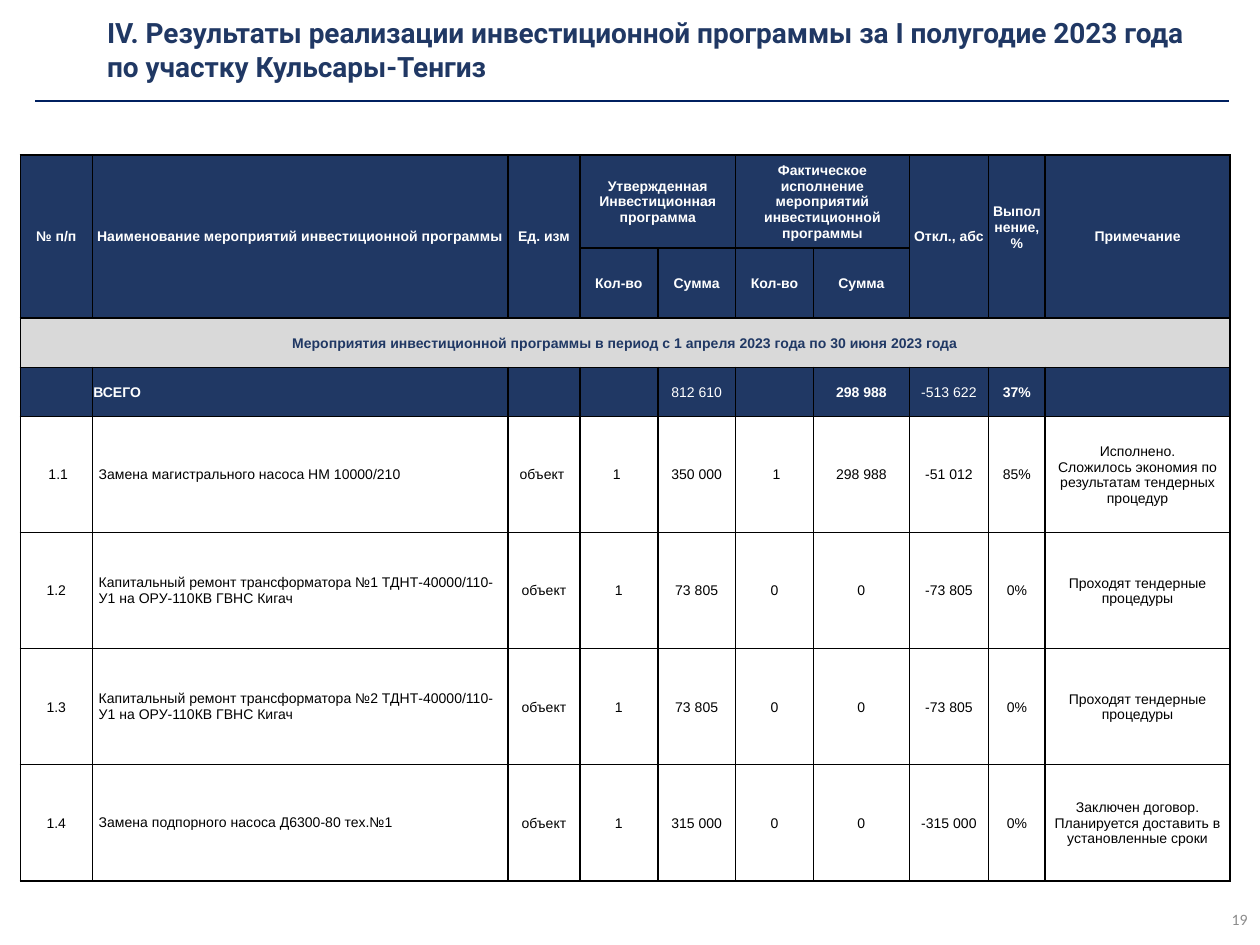
import pptx
import pptx.util
import pptx.dml.color
import pptx.enum.shapes
import pptx.enum.text
import pptx.oxml
import pptx.oxml.ns
from lxml import etree

Cm = pptx.util.Cm
Pt = pptx.util.Pt
RGB = pptx.dml.color.RGBColor
ALIGN = pptx.enum.text.PP_ALIGN
MIDDLE = pptx.enum.text.MSO_ANCHOR.MIDDLE

NAVY = RGB(0x20, 0x38, 0x64)
RULE = RGB(0x00, 0x20, 0x60)
GREY = RGB(0xD9, 0xD9, 0xD9)
FAINT = RGB(0x8C, 0x8C, 0x8C)
WHITE = RGB(0xFF, 0xFF, 0xFF)
BLACK = RGB(0x00, 0x00, 0x00)

COLS = [1.45, 8.38, 1.45, 1.57, 1.57, 1.57, 1.93, 1.6, 1.14, 3.73]
ROWS = [1.88, 1.41, 0.99, 0.99] + [2.34] * 4
SPANS = [(0, c, 1, c) for c in (0, 1, 2, 7, 8, 9)]
SPANS += [(0, 3, 0, 4), (0, 5, 0, 6), (2, 0, 2, 9)]

CELLS = [
    ["№ п/п", "Наименование мероприятий инвестиционной программы", "Ед. изм",
     "Утвержденная Инвестиционная программа", "",
     "Фактическое исполнение мероприятий инвестиционной программы", "",
     "Откл., абс", "Выполнение,\n%", "Примечание"],
    ["", "", "", "Кол-во", "Сумма", "Кол-во", "Сумма", "", "", ""],
    ["Мероприятия инвестиционной программы в период с 1 апреля 2023 года "
     "по 30 июня 2023 года"] + [""] * 9,
    ["", "ВСЕГО", "", "", "812 610", "", "298 988", "-513 622", "37%", ""],
    [" 1.1", "Замена магистрального насоса НМ 10000/210", "объект ", "1 ",
     "350 000", " 1", "298 988", "-51 012", "85%",
     "Исполнено.\nСложилось экономия по результатам тендерных процедур"],
    ["1.2", "Капитальный ремонт трансформатора №1 ТДНТ-40000/110-У1 "
     "на ОРУ-110КВ ГВНС Кигач", "объект", "1", "73 805", "0", "0",
     "-73 805", "0%", "Проходят тендерные процедуры"],
    ["1.3", "Капитальный ремонт трансформатора №2 ТДНТ-40000/110-У1 "
     "на ОРУ-110КВ ГВНС Кигач", "объект", "1", "73 805", "0", "0",
     "-73 805", "0%", "Проходят тендерные процедуры"],
    ["1.4", "Замена подпорного насоса Д6300-80 тех.№1", "объект", "1",
     "315 000", "0", "0", "-315 000", "0%",
     "Заключен договор. Планируется доставить в установленные сроки"],
]


def write(frame, text, font, size, color, bold=False, align=ALIGN.LEFT):
    """Fill a text frame with one paragraph per line of text."""
    frame.word_wrap = True
    for i, line in enumerate(text.split("\n")):
        para = frame.add_paragraph() if i else frame.paragraphs[0]
        para.alignment = align
        run = para.add_run()
        run.text = line
        run.font.name = font
        run.font.size = Pt(size)
        run.font.bold = bold
        run.font.color.rgb = color


def add_label(slide, box, *style):
    """Place a vertically centred text box."""
    frame = slide.shapes.add_textbox(*map(Cm, box)).text_frame
    frame.vertical_anchor = MIDDLE
    write(frame, *style)


def add_head(slide, left, top, width):
    """Place the title and the rule below it."""
    add_label(slide, (left + 1.2, top, 23.26, 1.6),
              "IV. Результаты реализации инвестиционной программы "
              "за I полугодие 2023 года\nпо участку Кульсары-Тенгиз",
              "Roboto", 16, NAVY, True)
    y = Cm(top + 1.83)
    line = slide.shapes.add_connector(
        pptx.enum.shapes.MSO_CONNECTOR.STRAIGHT, Cm(left), y, Cm(left + width), y)
    line.line.color.rgb = RULE
    line.line.width = Pt(1)
    etree.SubElement(line._element.spPr, pptx.oxml.ns.qn("a:effectLst"))


def add_edges(cell):
    """Draw a thin black border around a cell."""
    props = cell._tc.get_or_add_tcPr()
    for side in ("lnL", "lnR", "lnT", "lnB"):
        props.append(pptx.oxml.parse_xml(
            f'<a:{side} {pptx.oxml.ns.nsdecls("a")} w="12700"><a:solidFill>'
            f'<a:srgbClr val="{BLACK}"/></a:solidFill></a:{side}>'))


def style_cell(cell, row, col, text):
    """Set the look of a cell from its place in the table."""
    body = row > 3
    name = body and col == 1
    fill, color = (WHITE, BLACK) if body else (NAVY, WHITE)
    if row == 2:
        fill, color = GREY, NAVY
    add_edges(cell)
    cell.fill.solid()
    cell.fill.fore_color.rgb = fill
    cell.vertical_anchor = MIDDLE
    pad = Cm(0.13 if name else 0.02)
    cell.margin_left = cell.margin_right = cell.margin_top = pad
    cell.margin_bottom = pad if name else 0
    if (row, col) == (0, 8):
        cell.margin_bottom = Cm(0.38)
    if text:
        bold = row < 3 or row == 3 and col not in (4, 7)
        align = ALIGN.LEFT if row > 2 and col == 1 else ALIGN.CENTER
        write(cell.text_frame, text, "Arial", 8, color, bold, align)


def add_plan(slide, left, top):
    """Place the table of planned and actual works."""
    table = slide.shapes.add_table(
        len(ROWS), len(COLS), Cm(left), Cm(top), Cm(sum(COLS)), Cm(sum(ROWS))).table
    for col, width in zip(table.columns, COLS):
        col.width = Cm(width)
    for row, height in zip(table.rows, ROWS):
        row.height = Cm(height)
    for r, texts in enumerate(CELLS):
        for c, text in enumerate(texts):
            style_cell(table.cell(r, c), r, c, text)
    for r, c, last, end in SPANS:
        table.cell(r, c).merge(table.cell(last, end))


def main():
    """Build and save the slide."""
    deck = pptx.Presentation()
    deck.slide_width, deck.slide_height = Cm(25.4), Cm(19.05)
    slide = deck.slides.add_slide(deck.slide_layouts[6])
    add_label(slide, (19.69, 18.03, 5.71, 1.02),
              "19", "Calibri", 9, FAINT, False, ALIGN.RIGHT)
    add_head(slide, 0.71, 0.2, 24.06)
    add_plan(slide, 0.41, 3.12)
    deck.save("out.pptx")


if __name__ == "__main__":
    main()
